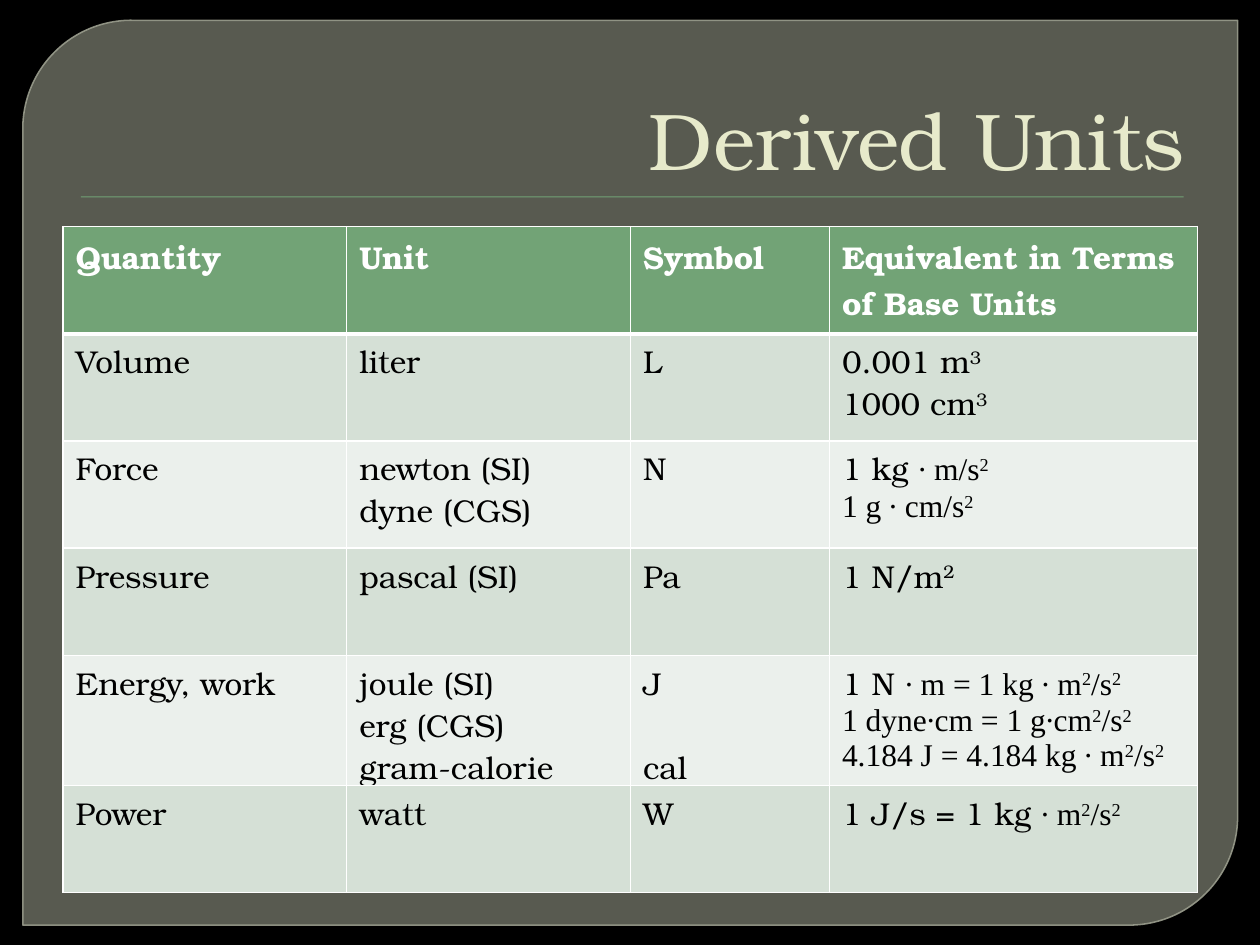
from lxml import etree
from pptx import Presentation
from pptx import util as u
from pptx.dml import color
from pptx.enum import shapes, text
from pptx.oxml import ns

SERIF, TIMES = "TeX Gyre Bonum", "Times New Roman"


def rgb(code):
    return color.RGBColor.from_string(code)


def add_run(paragraph, words, font, size, code, bold=False, raised=False):
    run = paragraph.add_run()
    run.text = words
    run.font.name, run.font.size, run.font.bold = font, u.Pt(size), bold
    run.font.color.rgb = rgb(code)
    if raised:
        run._r.get_or_add_rPr().set("baseline", "30000")


deck = Presentation()
deck.slide_width, deck.slide_height = u.Cm(25.4), u.Cm(19.05)
slide = deck.slides.add_slide(deck.slide_layouts[6])
slide.background.fill.solid()
slide.background.fill.fore_color.rgb = rgb("000000")

# Translucent panel with two rounded corners
panel = slide.shapes.add_shape(shapes.MSO_SHAPE.ROUND_2_DIAG_RECTANGLE,
                               u.Cm(0.46), u.Cm(0.41), u.Cm(24.49), u.Cm(18.24))
panel.adjustments[0], panel.adjustments[1] = 0.12, 0
panel.shadow.inherit = False
panel.fill.solid()
panel.fill.fore_color.rgb = rgb("888B7B")
panel.line.color.rgb = rgb("9DA090")
panel.line.width = u.Pt(0.87)
for tint, alpha in zip(panel._element.spPr.iter(ns.qn("a:srgbClr")), (65000, 88000)):
    etree.SubElement(tint, ns.qn("a:alpha"), val=str(alpha))

# Rule under the title
rule = slide.shapes.add_shape(shapes.MSO_SHAPE.RECTANGLE,
                              u.Cm(1.63), u.Cm(3.96), u.Cm(22.23), u.Cm(0.02))
rule.shadow.inherit = False
rule.fill.solid()
rule.fill.fore_color.rgb = rgb("72A376")
rule.line.fill.background()

# Title
title = slide.shapes.add_textbox(u.Cm(1.27), u.Cm(0.71), u.Cm(22.86), u.Cm(3.18)).text_frame
title.word_wrap = True
title.vertical_anchor = text.MSO_ANCHOR.BOTTOM
title.paragraphs[0].alignment = text.PP_ALIGN.RIGHT
add_run(title.paragraphs[0], "Derived Units", SERIF, 46, "E7EACB")

# Table text: a newline starts a paragraph, | switches to Times, ^ raises one character
units = [
    ("Quantity", "Unit", "Symbol", "Equivalent in Terms of Base Units"),
    ("Volume", "liter", "L", "0.001 m^3\n1000 cm^3"),
    ("Force", "newton (SI)\ndyne (CGS)", "N", "1 kg |∙ m/s^2\n|1 g ∙ cm/s^2"),
    ("Pressure", "pascal (SI)", "Pa", "1 N/m^2"),
    ("Energy, work", "joule (SI)\nerg (CGS)\ngram-calorie", "J\ncal",
     "1 N |∙ m = 1 kg ∙ m^2/s^2\n|1 dyne∙cm = 1 g∙cm^2/s^2\n|4.184 J = 4.184 kg ∙ m^2/s^2"),
    ("Power", "watt", "W", "1 J/s = 1 kg |∙ m^2/s^2"),
]
widths = [5.72, 5.72, 4.01, 7.42]
table = slide.shapes.add_table(len(units), len(widths), u.Cm(1.27), u.Cm(4.57),
                               u.Cm(22.86), u.Cm(12.96)).table
for column, width in zip(table.columns, widths):
    column.width = u.Cm(width)

for r, row in enumerate(units):
    table.rows[r].height = u.Cm(2.16)
    header = r == 0
    band = "72A376" if header else ("EBF0EC", "D5E0D6")[r % 2]
    ink = "FFFFFF" if header else "000000"
    for c, content in enumerate(row):
        cell = table.cell(r, c)

        # White borders, thicker below the header
        for side in "LRTB":
            thick = (r, side) in ((0, "B"), (1, "T"))
            edge = etree.SubElement(cell._tc.get_or_add_tcPr(), ns.qn(f"a:ln{side}"),
                                    w=str(u.Pt(3 if thick else 1)))
            edge_fill = etree.SubElement(edge, ns.qn("a:solidFill"))
            etree.SubElement(edge_fill, ns.qn("a:srgbClr"), val="FFFFFF")
        cell.fill.solid()
        cell.fill.fore_color.rgb = rgb(band)

        for i, line in enumerate(content.split("\n")):
            frame = cell.text_frame
            paragraph = frame.add_paragraph() if i else frame.paragraphs[0]
            if line == "cal":  # level with gram-calorie
                paragraph.space_before = u.Pt(24)
            for part, font in zip(line.split("|"), (SERIF, TIMES)):
                plain, *powers = part.split("^")
                if plain:
                    add_run(paragraph, plain, font, 18, ink, header)
                for power in powers:
                    add_run(paragraph, power[0], font, 18, ink, header, raised=True)
                    if power[1:]:
                        add_run(paragraph, power[1:], font, 18, ink, header)

deck.save("out.pptx")
